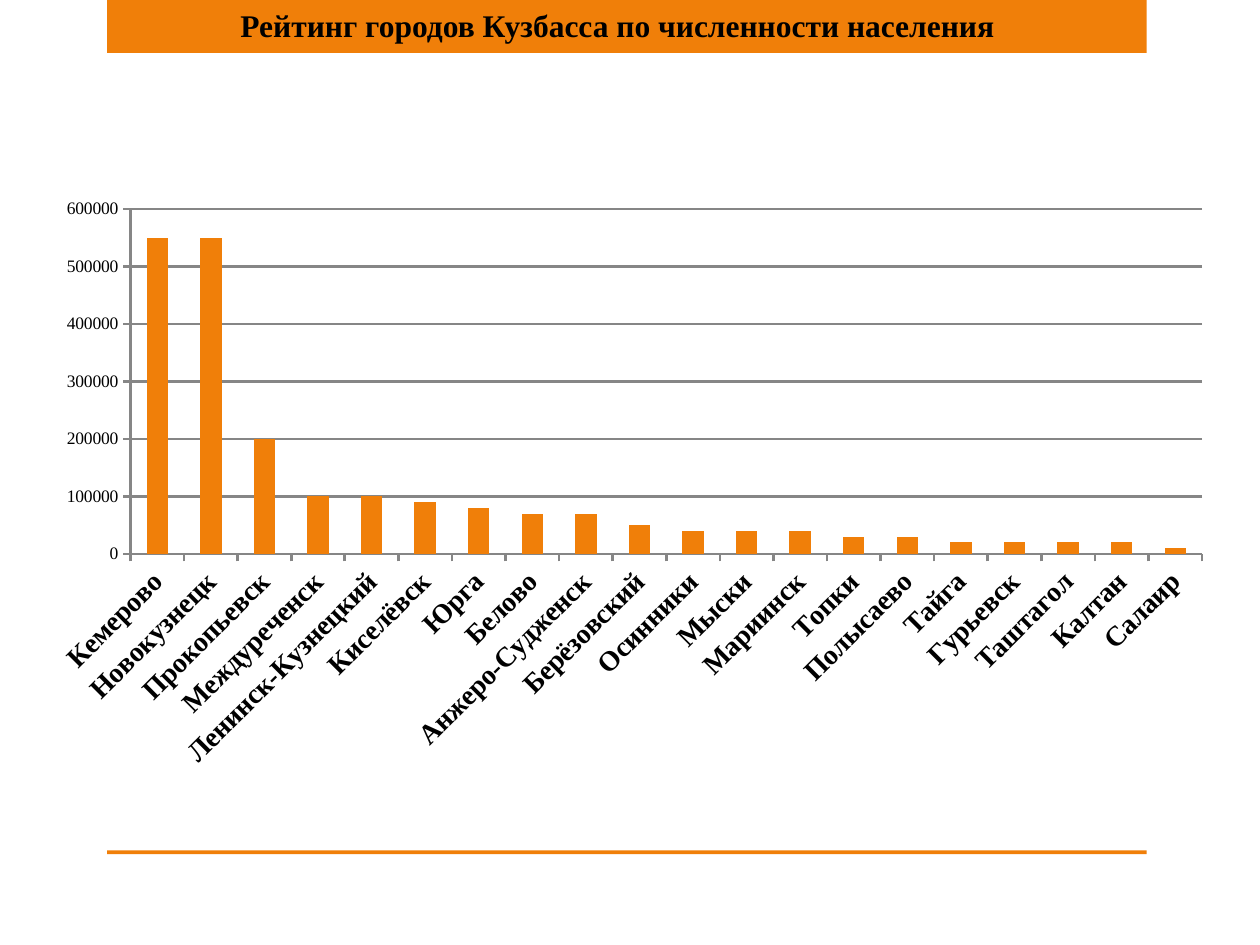
"""Build a slide ranking the towns of Kuzbass by population."""
import pptx
import pptx.chart.data
import pptx.dml.color
import pptx.enum.chart
import pptx.enum.shapes
import pptx.enum.text
import pptx.oxml
import pptx.oxml.ns
import pptx.util

Inches = pptx.util.Inches
Pt = pptx.util.Pt
RGB = pptx.dml.color.RGBColor.from_string

THEME = {
    "font": "Times New Roman",
    "accent": RGB("F07F09"),
    "text": RGB("000000"),
    "line": RGB("868686"),
    "plot": "FFFFFF",
    "title_size": Pt(18),
    "town_size": Pt(16),
    "value_size": Pt(10),
}

POPULATION = {
    "Кемерово": 550000,
    "Новокузнецк": 550000,
    "Прокопьевск": 200000,
    "Междуреченск": 100000,
    "Ленинск-Кузнецкий": 100000,
    "Киселёвск": 90000,
    "Юрга": 80000,
    "Белово": 70000,
    "Анжеро-Судженск": 70000,
    "Берёзовский": 50000,
    "Осинники": 40000,
    "Мыски": 40000,
    "Мариинск": 40000,
    "Топки": 30000,
    "Полысаево": 30000,
    "Тайга": 20000,
    "Гурьевск": 20000,
    "Таштагол": 20000,
    "Калтан": 20000,
    "Салаир": 10000,
}


def style_font(font, size, bold):
    font.name = THEME["font"]
    font.size = size
    font.bold = bold
    font.color.rgb = THEME["text"]


presentation = pptx.Presentation()
presentation.slide_width = Inches(10)
presentation.slide_height = Inches(7.5)
slide = presentation.slides.add_slide(presentation.slide_layouts[6])

for top, height in ((0, 0.42), (6.75, 0.03)):
    band = slide.shapes.add_shape(
        pptx.enum.shapes.MSO_SHAPE.RECTANGLE,
        Inches(0.85), Inches(top), Inches(8.25), Inches(height))
    band.shadow.inherit = False
    band.fill.solid()
    band.fill.fore_color.rgb = THEME["accent"]
    band.line.fill.background()

title = slide.shapes.add_textbox(Inches(1.81), 0, Inches(8.19), Inches(0.4)).text_frame
title.word_wrap = True
title.auto_size = pptx.enum.text.MSO_AUTO_SIZE.SHAPE_TO_FIT_TEXT
title.text = "Рейтинг городов Кузбасса по численности населения"
style_font(title.paragraphs[0].font, THEME["title_size"], True)

ranking = pptx.chart.data.CategoryChartData()
ranking.categories = list(POPULATION)
ranking.add_series("Series 1", list(POPULATION.values()))
chart = slide.shapes.add_chart(
    pptx.enum.chart.XL_CHART_TYPE.COLUMN_CLUSTERED,
    Inches(0.28), Inches(1.47), Inches(9.45), Inches(4.72), ranking).chart
chart.has_legend = False
chart.has_title = False
style_font(chart.font, THEME["value_size"], False)

bars = chart.plots[0]
bars.gap_width = 150
bars.vary_by_categories = False
bars.series[0].format.fill.solid()
bars.series[0].format.fill.fore_color.rgb = THEME["accent"]

towns, people = chart.category_axis, chart.value_axis
style_font(towns.tick_labels.font, THEME["town_size"], True)
towns.tick_labels.font._element.getparent().getparent().getparent().find(
    pptx.oxml.ns.qn("a:bodyPr")).set("rot", "-2700000")
style_font(people.tick_labels.font, THEME["value_size"], False)
people.minimum_scale = 0
people.maximum_scale = 600000
people.major_unit = 100000
people.has_major_gridlines = True
for axis in (towns, people):
    axis.major_tick_mark = pptx.enum.chart.XL_TICK_MARK.OUTSIDE
for ruled in (towns, people, people.major_gridlines):
    ruled.format.line.color.rgb = THEME["line"]
    ruled.format.line.width = Pt(1.5)

plot_area = chart._chartSpace.chart.plotArea
for automatic_layout in plot_area.findall(pptx.oxml.ns.qn("c:layout")):
    plot_area.remove(automatic_layout)
plot_area.insert(0, pptx.oxml.parse_xml(
    f'<c:layout {pptx.oxml.ns.nsdecls("c")}><c:manualLayout>'
    '<c:layoutTarget val="inner"/><c:xMode val="edge"/><c:yMode val="edge"/>'
    '<c:x val="0.08"/><c:y val="0.04"/><c:w val="0.9"/><c:h val="0.58"/>'
    '</c:manualLayout></c:layout>'))
plot_area.append(pptx.oxml.parse_xml(
    f'<c:spPr {pptx.oxml.ns.nsdecls("c", "a")}><a:solidFill>'
    f'<a:srgbClr val="{THEME["plot"]}"/></a:solidFill></c:spPr>'))

presentation.save("out.pptx")
